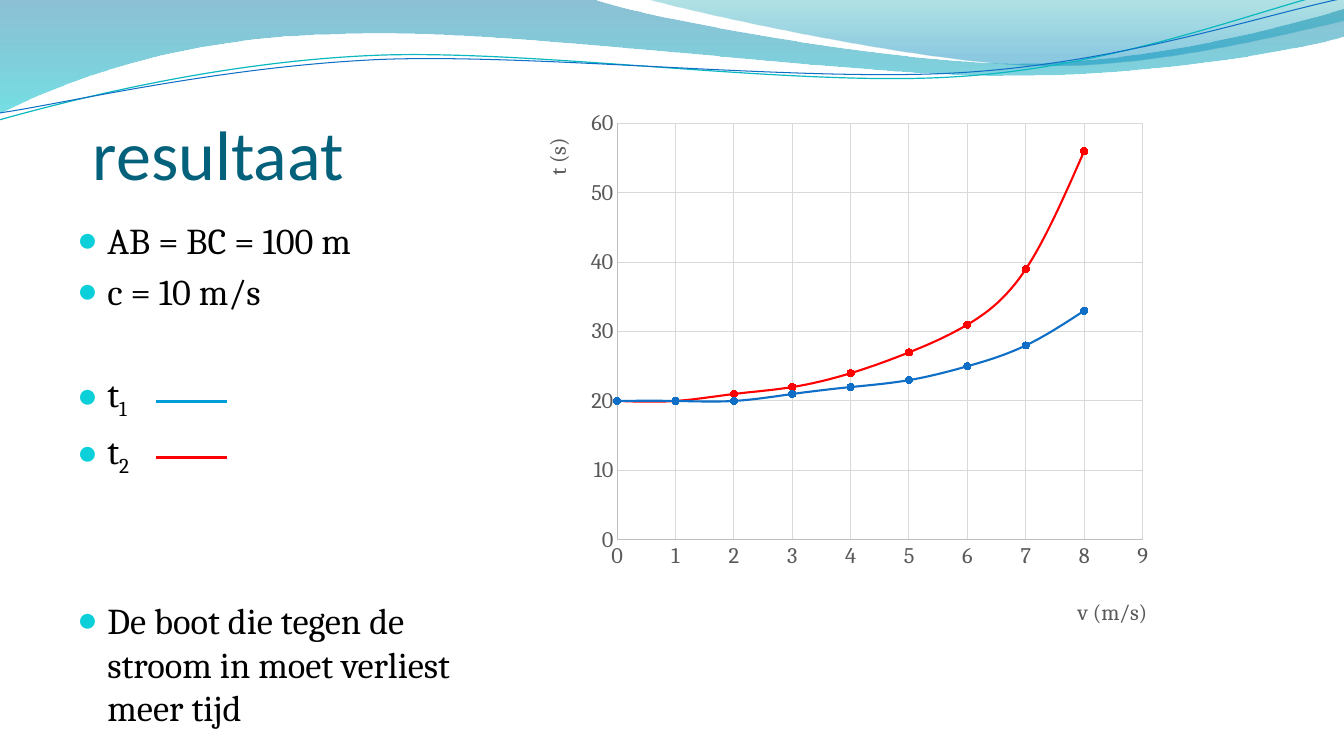
from dataclasses import dataclass

from lxml import etree
from pptx import Presentation
from pptx import util as u
from pptx.chart.data import XyChartData
from pptx.dml.color import RGBColor
from pptx.enum import chart as charts, shapes, text
from pptx.oxml.ns import qn


@dataclass(frozen=True)
class Theme:
    heading_font: str = "Calibri"
    body_font: str = "Cambria"
    title_size: float = 50
    body_size: float = 26
    chart_size: float = 16
    title: str = "04617B"
    body: str = "000000"
    bullet: str = "0BD0D9"
    label: str = "595959"
    axis: str = "BFBFBF"
    grid: str = "D9D9D9"
    blue: str = "0F6FC6"
    sky: str = "009DD9"
    teal: str = "0AB8BF"
    red: str = "FF0000"


def apply(target, values):
    for name, value in values.items():
        setattr(target, name, value)


def add_xml(parent, tag, **attributes):
    return etree.SubElement(parent, qn(tag), attributes)


class SlideBuilder:
    cell = u.Inches(0.1)

    def __init__(self, presentation, theme):
        self.theme = theme
        self.slide = presentation.slides.add_slide(presentation.slide_layouts[1])

    def place(self, *cells):
        return [round(value * self.cell) for value in cells]

    def style_font(self, font, name, size, color):
        apply(font, dict(name=name, size=u.Pt(size), bold=False))
        font.color.rgb = RGBColor.from_string(color)

    def style_line(self, line, color, width):
        line.color.rgb = RGBColor.from_string(color)
        line.width = u.Pt(width)

    def outline(self, start, segments, close):
        builder = self.slide.shapes.build_freeform(*self.place(*start), scale=1.0)
        for segment in segments:
            points = zip(segment[::2], segment[1::2])
            builder.add_line_segments([self.place(*point) for point in points], close=False)
        if close:
            builder.add_line_segments([], close=True)
        shape = builder.convert_to_shape()
        shape.shadow.inherit = False
        steps = iter(list(shape.element.iter(qn("a:lnTo"))))
        for segment in segments:
            group = [next(steps) for _ in segment[::2]]
            if len(group) == 3:
                curve = etree.Element(qn("a:cubicBezTo"))
                group[0].addprevious(curve)
                for step in group:
                    curve.append(step[0])
                    step.getparent().remove(step)
        return shape

    def wave(self, start, segments, stops):
        shape = self.outline(start, segments, close=True)
        shape.line.fill.background()
        shape.fill.gradient()
        shape.fill.gradient_angle = 270
        for stop, (position, color, _) in zip(shape.fill.gradient_stops, stops):
            stop.position = position
            stop.color.rgb = RGBColor.from_string(color)
        for color, (_, _, alpha) in zip(shape.element.iter(qn("a:srgbClr")), stops):
            add_xml(color, "a:alpha", val=str(alpha * 1000))

    def ripple(self, start, segments, color, width):
        shape = self.outline(start, segments, close=False)
        shape.fill.background()
        self.style_line(shape.line, color, width)

    def placeholder(self, index, box, frame_format):
        shape = self.slide.placeholders[index]
        shape.element.getparent().append(shape.element)
        apply(shape, dict(zip(("left", "top", "width", "height"), self.place(*box))))
        apply(shape.text_frame, dict(word_wrap=True, auto_size=text.MSO_AUTO_SIZE.NONE, **frame_format))
        return shape.text_frame

    def title(self, wording, box):
        frame = self.placeholder(0, box, dict(
            vertical_anchor=text.MSO_ANCHOR.BOTTOM, margin_left=0, margin_right=0,
            margin_top=u.Inches(0.05), margin_bottom=0))
        paragraph = frame.paragraphs[0]
        paragraph.alignment = text.PP_ALIGN.LEFT
        run = paragraph.add_run()
        run.text = wording
        self.style_font(run.font, self.theme.heading_font, self.theme.title_size, self.theme.title)

    def bullets(self, items, box):
        frame = self.placeholder(1, box, dict(vertical_anchor=text.MSO_ANCHOR.TOP))
        for number, (wording, subscript, space) in enumerate(items):
            paragraph = frame.add_paragraph() if number else frame.paragraphs[0]
            apply(paragraph, dict(alignment=text.PP_ALIGN.LEFT, space_before=u.Pt(space)))
            properties = paragraph._p.get_or_add_pPr()
            indent = u.Inches(0.3)
            properties.set("marL", str(indent))
            properties.set("indent", str(-indent))
            add_xml(add_xml(properties, "a:buClr"), "a:srgbClr", val=self.theme.bullet)
            add_xml(properties, "a:buSzPct", val="95000")
            add_xml(properties, "a:buChar", char="●")
            for part, baseline in ((wording, 0), (subscript, -25000)):
                if part:
                    run = paragraph.add_run()
                    run.text = part
                    self.style_font(run.font, self.theme.body_font, self.theme.body_size, self.theme.body)
                    if baseline:
                        run.font._element.set("baseline", str(baseline))

    def layout(self, element, shares, **modes):
        layout = element.find(qn("c:layout"))
        if layout is None:
            layout = etree.Element(qn("c:layout"))
            element.insert(0, layout)
        manual = add_xml(layout, "c:manualLayout")
        for name, value in dict(modes, xMode="edge", yMode="edge").items():
            add_xml(manual, f"c:{name}", val=value)
        for name, percent in zip("xywh", shares):
            add_xml(manual, f"c:{name}", val=str(percent / 100))

    def axis(self, axis, wording, maximum, unit, corner, rotation):
        none = charts.XL_TICK_MARK.NONE
        apply(axis, dict(minimum_scale=0, maximum_scale=maximum, major_unit=unit, major_tick_mark=none,
                         minor_tick_mark=none, has_major_gridlines=True, has_title=True))
        self.style_line(axis.format.line, self.theme.axis, 0.75)
        self.style_line(axis.major_gridlines.format.line, self.theme.grid, 0.75)
        label = (self.theme.body_font, self.theme.chart_size, self.theme.label)
        self.style_font(axis.tick_labels.font, *label)
        run = axis.axis_title.text_frame.paragraphs[0].add_run()
        run.text = wording
        self.style_font(run.font, *label)
        title = axis.axis_title.element
        next(title.iter(qn("a:bodyPr"))).set("rot", str(rotation * 60000))
        self.layout(title, corner)

    def scatter(self, series, box):
        data = XyChartData()
        for name, values, _ in series:
            points = data.add_series(name)
            for speed, time in enumerate(values):
                points.add_data_point(speed, time)
        chart = self.slide.shapes.add_chart(
            charts.XL_CHART_TYPE.XY_SCATTER_SMOOTH, *self.place(*box), data).chart
        apply(chart, dict(has_legend=False, has_title=False))
        self.style_font(chart.font, self.theme.body_font, 10, self.theme.body)
        plot = chart.plots[0]
        plot.vary_by_categories = False
        for drawn, (_, _, color) in zip(plot.series, series):
            self.style_line(drawn.format.line, color, 1.5)
            apply(drawn.marker, dict(style=charts.XL_MARKER_STYLE.CIRCLE, size=5))
            drawn.marker.format.fill.solid()
            drawn.marker.format.fill.fore_color.rgb = RGBColor.from_string(color)
            self.style_line(drawn.marker.format.line, color, 0.75)
        for smooth in chart.element.iter(qn("c:smooth")):
            smooth.set("val", "1")
        self.axis(chart.category_axis, "v (m/s)", 9, 1, (86.4, 93.5), 0)
        self.axis(chart.value_axis, "t (s)", 60, 10, (2.8, 6.6), -90)
        self.layout(next(chart.element.iter(qn("c:plotArea"))), (15, 4.5, 82.2, 78.8),
                    layoutTarget="inner")

    def key_line(self, left, right, row, color):
        connector = self.slide.shapes.add_connector(
            shapes.MSO_CONNECTOR.STRAIGHT, *self.place(left, row, right, row))
        self.style_line(connector.line, color, 2)
        add_xml(connector.element.spPr, "a:effectLst")


def main():
    presentation = Presentation()
    apply(presentation, dict(slide_width=u.Inches(13.33), slide_height=u.Inches(7.5)))
    theme = Theme()
    builder = SlideBuilder(presentation, theme)
    builder.wave((-0.1, 0), [
        (58.7, -0.1), (63.4, 1.7, 88.5, 6.3, 101.1, 6.3), (113.8, 6.3, 127.8, 2.6, 133.3, 0.9),
        (133.5, 3.6), (131.1, 4.4, 116, 7.6, 99.4, 7.5), (82.9, 7.5, 50.9, 2.8, 34.3, 3.4),
        (17.2, 3.6, 6.1, 8.3, -0.1, 11.3)], [(0, "0074A1", 45), (1, "00C6CF", 55)])
    builder.wave((63.9, -0.1), [
        (67.9, 1.1, 90.9, 6.2, 102.5, 6.5), (114.1, 6.9, 128.2, 3.2, 133.3, 2.1), (133.3, 0)],
        [(0, "00A1A9", 30), (0.8, "008BBF", 45)])
    builder.ripple((-0.1, 11.9), [
        (6.4, 10.1, 21.1, 6.2, 36.9, 5.5), (52.7, 4.8, 79, 8.7, 95, 7.6),
        (111, 6.6, 125.2, 0.8, 133.1, -1)], theme.teal, 0.85)
    builder.ripple((0, 11.2), [
        (6.3, 10.3, 21.8, 6.6, 37.8, 5.9), (53.7, 5.3, 79.6, 8.2, 95.5, 7.2),
        (111.5, 6.2, 125.5, 1.4, 133.4, -0.2)], theme.blue, 0.75)
    builder.title("resultaat", (9.2, 6.8, 120, 12.5))
    builder.bullets([
        ("AB = BC = 100 m", "", 5.2), ("c = 10 m/s", "", 5.2), ("t", "1", 42), ("t", "2", 5.2),
        ("De boot die tegen de stroom in moet verliest meer tijd", "", 86)], (6.65, 21.1, 41.9, 48))
    builder.scatter([
        ("Series 1", (20, 20, 20, 21, 22, 23, 25, 28, 33), theme.blue),
        ("Series 2", (20, 20, 21, 22, 24, 27, 31, 39, 56), theme.red)], (51.7, 9.9, 63.4, 52.8))
    for row, color in ((45.4, theme.red), (39.85, theme.sky)):
        builder.key_line(15.5, 22.55, row, color)
    presentation.save("out.pptx")


if __name__ == "__main__":
    main()
